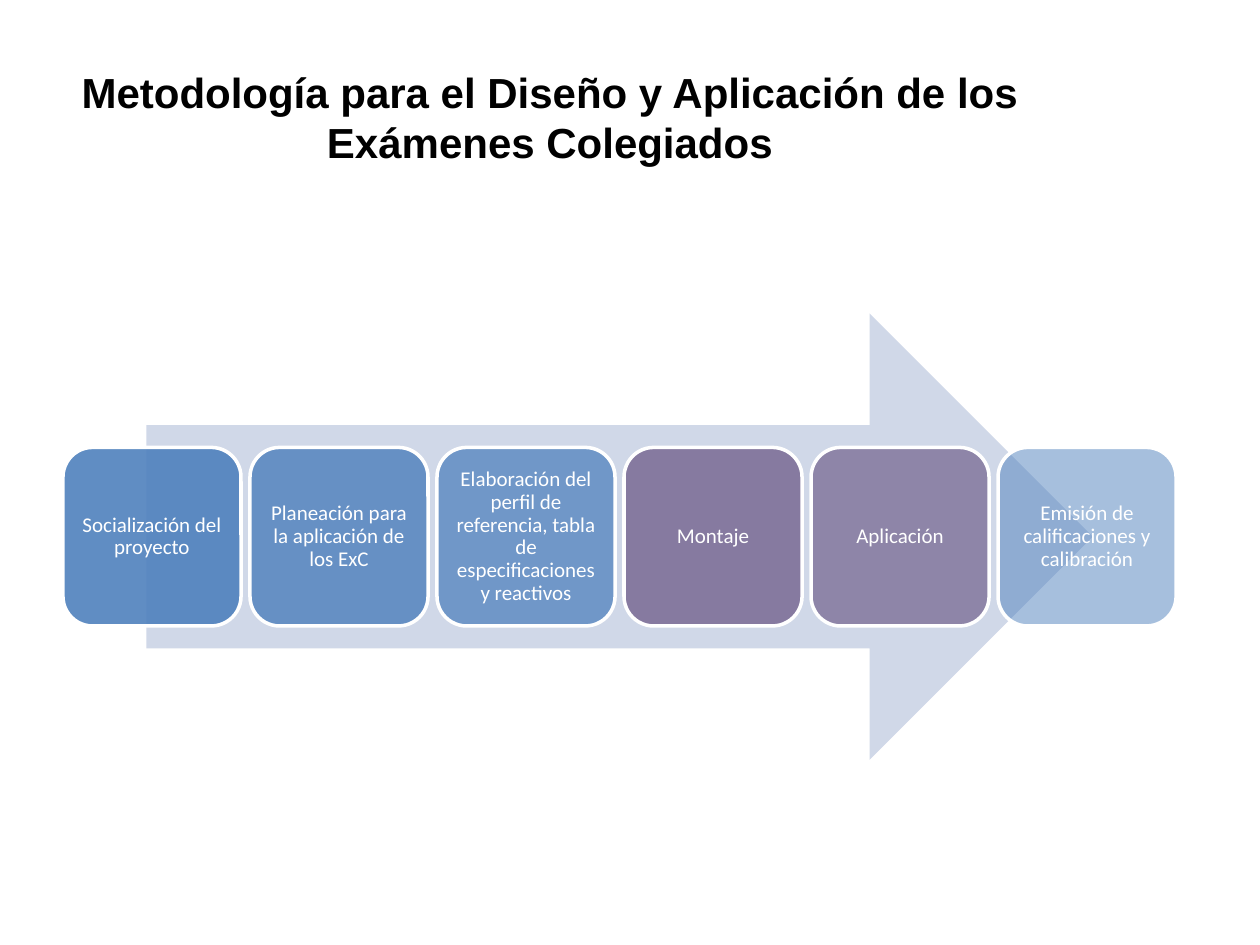
"""Build a slide showing the six stages of the collegiate exam methodology."""
from lxml import etree
from pptx import Presentation
from pptx import util as u
from pptx.dml.color import RGBColor
from pptx.enum import shapes, text
from pptx.oxml.ns import qn

COLORS = {"black": "000000", "white": "FFFFFF", "arrow": "D0D8E8",
          "blue": "4F81BD", "purple": "604A7B"}
STAGES = [
    ("Socialización del proyecto", "blue"),
    ("Planeación para la aplicación de los ExC", "blue"),
    ("Elaboración del perfil de referencia, tabla de especificaciones y reactivos", "blue"),
    ("Montaje", "purple"),
    ("Aplicación", "purple"),
    ("Emisión de calificaciones y calibración", "blue"),
]
LEFT, STEP = 1.27, 3.77


def rgb(name):
    return RGBColor.from_string(COLORS[name])


def style(p, font, size, color):
    p.alignment = text.PP_ALIGN.CENTER
    p.font.name = font
    p.font.size = u.Pt(size)
    p.font.color.rgb = rgb(color)


prs = Presentation()
prs.slide_width, prs.slide_height = u.Cm(25.4), u.Cm(19.05)
s = prs.slides.add_slide(prs.slide_layouts[5])

title = s.shapes.title
title.left, title.top, title.width, title.height = u.Cm(1.27), u.Cm(0.76), u.Cm(19.63), u.Cm(3.18)
tf = title.text_frame
tf.text = "Metodología para el Diseño y Aplicación de los Exámenes Colegiados"
tf.auto_size = text.MSO_AUTO_SIZE.NONE
tf.vertical_anchor = text.MSO_ANCHOR.MIDDLE
style(tf.paragraphs[0], "Arial", 24, "black")
tf.paragraphs[0].font.bold = True

arrow = s.shapes.add_shape(shapes.MSO_SHAPE.RIGHT_ARROW,
                           u.Cm(2.95), u.Cm(6.32), u.Cm(19.08), u.Cm(9))
arrow.shadow.inherit = False
arrow.fill.solid()
arrow.fill.fore_color.rgb = rgb("arrow")
arrow.line.fill.background()

for i, (label, color) in enumerate(STAGES):
    sp = s.shapes.add_shape(shapes.MSO_SHAPE.ROUNDED_RECTANGLE,
                            u.Cm(LEFT + i * STEP), u.Cm(9.02), u.Cm(3.59), u.Cm(3.6))
    sp.shadow.inherit = False
    sp.fill.solid()
    sp.fill.fore_color.rgb = rgb(color)
    clr = sp.fill._xPr.find(qn("a:solidFill"))[0]
    etree.SubElement(clr, qn("a:alpha"), val=str((90 - 8 * i) * 1000))
    sp.line.color.rgb = rgb("white")
    sp.line.width = u.Pt(2)
    tf = sp.text_frame
    tf.word_wrap = True
    tf.vertical_anchor = text.MSO_ANCHOR.MIDDLE
    tf.margin_left = tf.margin_right = tf.margin_top = tf.margin_bottom = u.Cm(0.13)
    tf.text = label
    p = tf.paragraphs[0]
    p.line_spacing = 0.9
    style(p, "Calibri", 12, "white")

prs.save("out.pptx")
